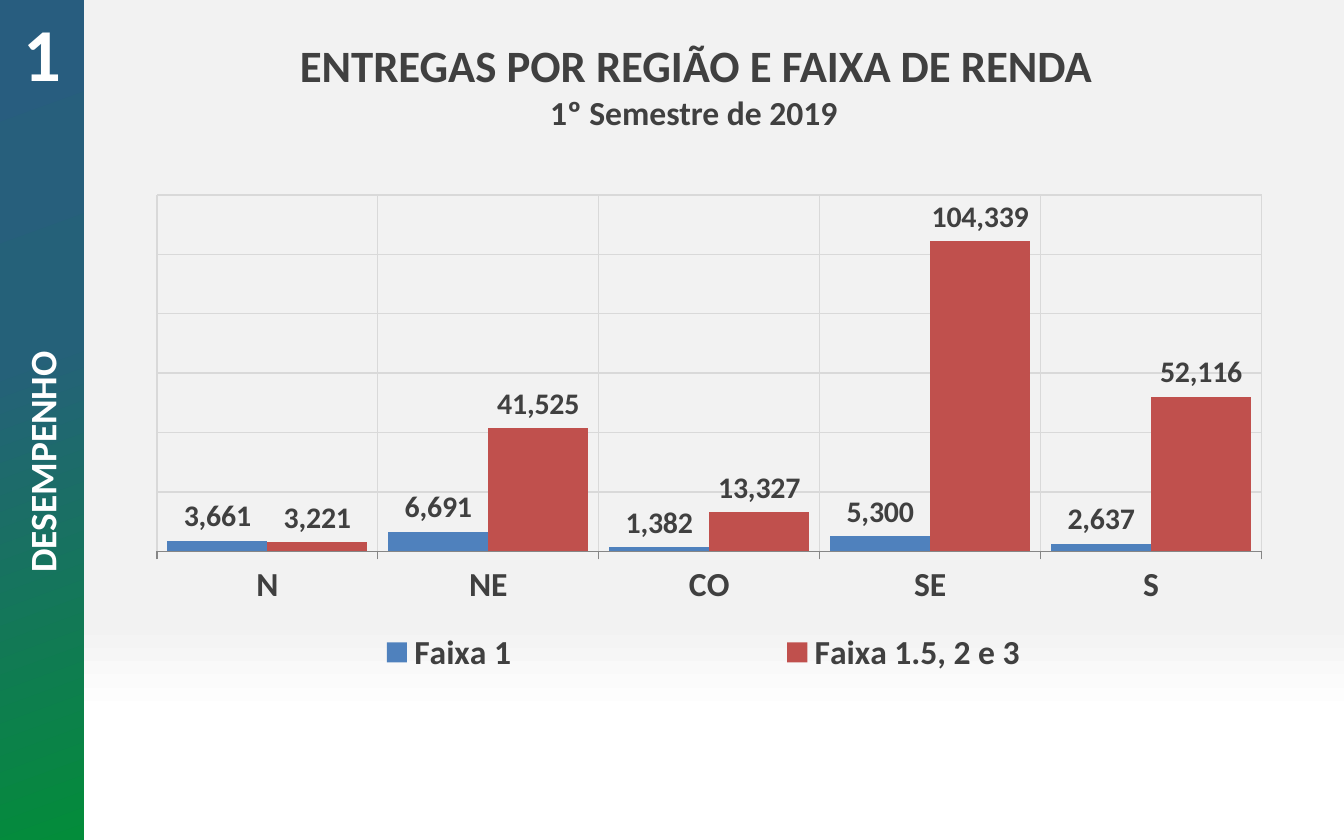
import pptx
import pptx.chart.data
import pptx.dml.color
import pptx.enum.chart
import pptx.enum.shapes
import pptx.enum.text
import pptx.oxml
import pptx.oxml.ns
import pptx.util
from lxml import etree

PX = 914400 / 134.4
FONT = "Calibri"
WHITE, DARK, GRID, AXIS = "FFFFFF", "404040", "D9D9D9", "868686"


def px(length):
    return pptx.util.Emu(round(length * PX))


def rgb(value):
    return pptx.dml.color.RGBColor.from_string(value)


def style_font(font, size, color):
    font.name = FONT
    font.size = pptx.util.Pt(size)
    font.bold = True
    font.color.rgb = rgb(color)


def style_line(line, color):
    line.color.rgb = rgb(color)
    line.width = pptx.util.Pt(0.75)


def set_gradient(fill, element, stops, angle):
    qn = pptx.oxml.ns.qn
    fill.gradient()
    fill.gradient_angle = 360 - angle
    stop_list = element.find(".//" + qn("a:gsLst"))
    for old_stop in list(stop_list):
        stop_list.remove(old_stop)
    for position, color in stops:
        stop = etree.SubElement(stop_list, qn("a:gs"), pos=str(position * 1000))
        etree.SubElement(stop, qn("a:srgbClr"), val=color)


class Deck:
    def __init__(self, width, height):
        self.presentation = pptx.Presentation()
        self.presentation.slide_width = px(width)
        self.presentation.slide_height = px(height)
        self.slide = self.presentation.slides.add_slide(self.presentation.slide_layouts[5])

    def background(self, stops, angle):
        set_gradient(self.slide.background.fill, self.slide.element, stops, angle)

    def band(self, box, stops, angle):
        band = self.slide.shapes.add_shape(
            pptx.enum.shapes.MSO_SHAPE.RECTANGLE, *map(px, box))
        band.shadow.inherit = False
        band.line.fill.background()
        set_gradient(band.fill, band.element, stops, angle)

    def set_text(self, holder, text, size, color):
        frame = holder.text_frame
        frame.word_wrap = True
        frame.auto_size = pptx.enum.text.MSO_AUTO_SIZE.NONE
        frame.vertical_anchor = pptx.enum.text.MSO_ANCHOR.TOP
        frame.text = text
        paragraph = frame.paragraphs[0]
        paragraph.alignment = pptx.enum.text.PP_ALIGN.CENTER
        style_font(paragraph.runs[0].font, size, color)

    def title(self, text, box, size, color):
        heading = self.slide.shapes.title
        heading.left, heading.top, heading.width, heading.height = map(px, box)
        self.set_text(heading, text, size, color)

    def label(self, text, box, size, color, rotation=0):
        label = self.slide.shapes.add_textbox(*map(px, box))
        label.rotation = rotation
        self.set_text(label, text, size, color)

    def columns(self, box, categories, series):
        data = pptx.chart.data.CategoryChartData(number_format="#,##0")
        data.categories = categories
        for name, values, _ in series:
            data.add_series(name, values)
        chart = self.slide.shapes.add_chart(
            pptx.enum.chart.XL_CHART_TYPE.COLUMN_CLUSTERED, *map(px, box), data).chart
        chart.has_title = False
        style_font(chart.font, 18, DARK)

        plot = chart.plots[0]
        plot.gap_width = 21
        plot.overlap = 0
        plot.vary_by_categories = False
        for columns, (_, _, color) in zip(plot.series, series):
            columns.invert_if_negative = False
            columns.format.fill.solid()
            columns.format.fill.fore_color.rgb = rgb(color)
            labels = columns.data_labels
            labels.show_value = True
            labels.position = pptx.enum.chart.XL_LABEL_POSITION.OUTSIDE_END
            labels.number_format = "#,##0"
            labels.number_format_is_linked = False
            style_font(labels.font, 16, DARK)

        for axis in (chart.category_axis, chart.value_axis):
            axis.has_major_gridlines = True
            style_line(axis.major_gridlines.format.line, GRID)
        chart.category_axis.major_tick_mark = pptx.enum.chart.XL_TICK_MARK.OUTSIDE
        style_line(chart.category_axis.format.line, AXIS)
        style_font(chart.category_axis.tick_labels.font, 18, DARK)
        chart.value_axis.visible = False
        chart.value_axis.minimum_scale = 0
        chart.value_axis.maximum_scale = 120000
        chart.value_axis.major_unit = 20000

        chart.has_legend = True
        chart.legend.position = pptx.enum.chart.XL_LEGEND_POSITION.RIGHT
        chart.legend.include_in_layout = False
        style_font(chart.legend.font, 18, DARK)
        self.place(chart, "c:plotArea", (0.03, 0.05, 0.95, 0.69), 0, [("layoutTarget", "inner")])
        self.place(chart, "c:legend", (0, 0.89, 1, 0.09), 1, [])

    def place(self, chart, tag, box, index, target):
        qn = pptx.oxml.ns.qn
        part = chart.element.find(".//" + qn(tag))
        for old_layout in part.findall(qn("c:layout")):
            part.remove(old_layout)
        layout = etree.Element(qn("c:layout"))
        manual = etree.SubElement(layout, qn("c:manualLayout"))
        edges = [("xMode", "edge"), ("yMode", "edge")]
        for name, value in target + edges + list(zip("xywh", box)):
            etree.SubElement(manual, qn("c:" + name), val=str(value))
        part.insert(index, layout)

    def save(self):
        self.presentation.save("out.pptx")


def main():
    deck = Deck(1344, 840)
    deck.background([(0, "F2F2F2"), (74, "F2F2F2"), (85, WHITE), (100, WHITE)], 90)
    deck.band((0, 0, 84, 840), [(0, "285D7F"), (42, "256179"), (100, "038C3A")], 70)
    deck.label("DESEMPENHO", (-314, 433, 711, 58), 20, WHITE, rotation=270)
    deck.label("1", (0, 0, 84, 110), 40, WHITE)
    deck.title("ENTREGAS POR REGIÃO E FAIXA DE RENDA", (206, 31, 980, 67), 24, DARK)
    deck.label("1º Semestre de 2019", (204, 85, 980, 67), 18, DARK)
    deck.columns((122, 169, 1163, 517), ["N", "NE", "CO", "SE", "S"], [
        ("Faixa 1", (3661, 6691, 1382, 5300, 2637), "4F81BD"),
        ("Faixa 1.5, 2 e 3", (3221, 41525, 13327, 104339, 52116), "C0504D"),
    ])
    deck.save()


if __name__ == "__main__":
    main()
